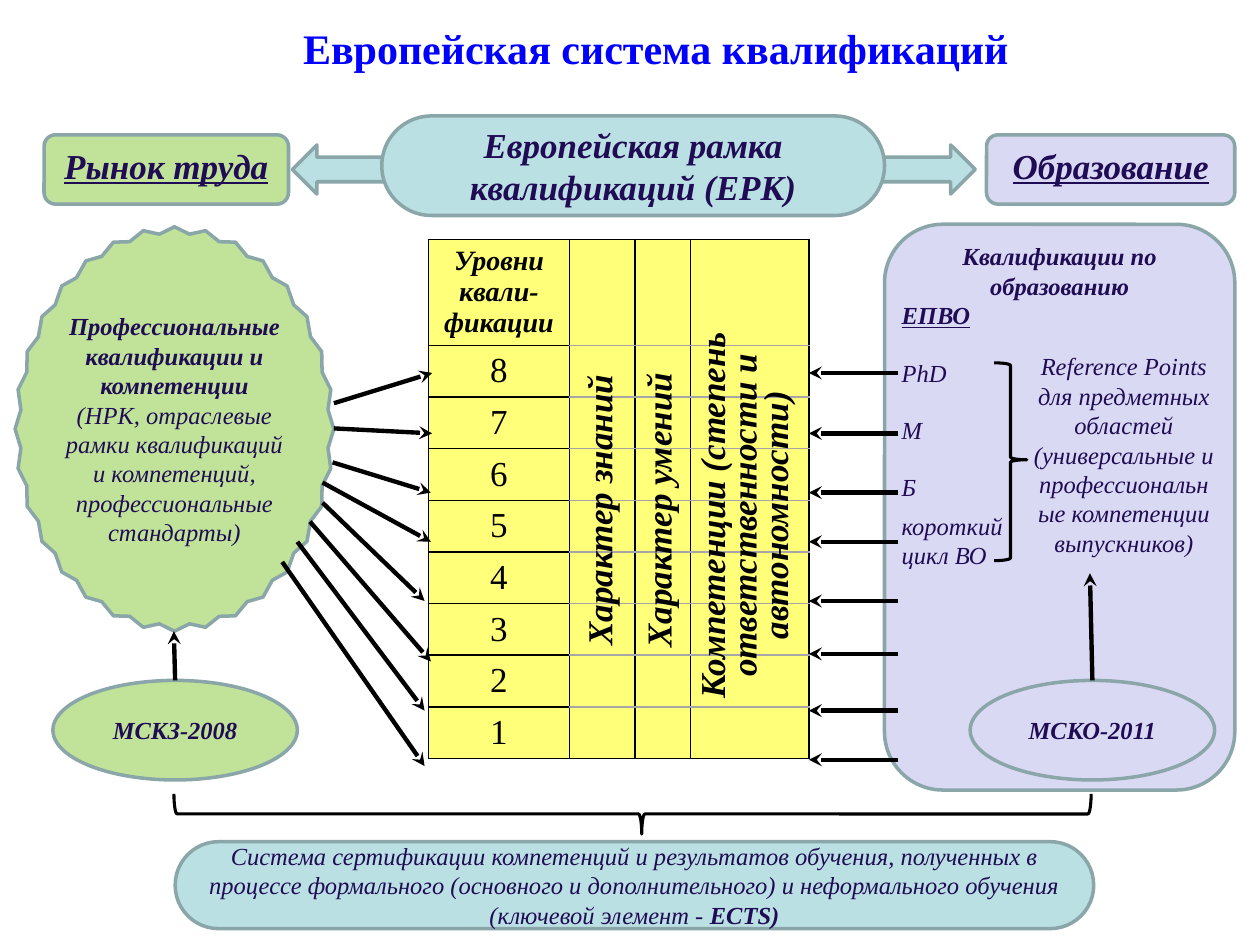
from dataclasses import dataclass, field

from lxml import etree
from pptx import Presentation
from pptx import util as u
from pptx.dml.color import RGBColor
from pptx.enum import shapes, text
from pptx.oxml import ns

PX = 9144  # 100 px to the inch
FONT = "Times New Roman"
BLACK, GREY, INK, TITLE = "000000", "A6A6A6", "200B55", "0000FF"
OUTLINE, TEAL, GREEN, LILAC, YELLOW = "8AA6A8", "BBE0E3", "C0E399", "D9D9F3", "FFFF79"
KIND, ALIGN, ANCHOR = shapes.MSO_SHAPE, text.PP_ALIGN, text.MSO_ANCHOR


@dataclass
class Span:
    words: str
    bold: bool = False
    underline: bool = False


@dataclass
class Line:
    spans: list[Span]
    align: ALIGN = ALIGN.CENTER
    before: float = 0
    spacing: float = 1.0


@dataclass
class Node:
    kind: KIND
    area: tuple[int, int, int, int]
    fill: str
    lines: list[Line] = field(default_factory=list)
    size: int = 14
    anchor: ANCHOR = ANCHOR.MIDDLE
    insets: tuple[int, int] = (10, 5)
    corner: float | None = None


def px(*values: int) -> list[u.Emu]:
    return [u.Emu(value * PX) for value in values]


def colour(code: str) -> RGBColor:
    return RGBColor.from_string(code)


def one(words: str, bold: bool = True, underline: bool = False, **layout) -> Line:
    return Line([Span(words, bold, underline)], **layout)


def write(frame, lines: list[Line], *, size: int, ink: str = INK, italic: bool = True,
          anchor: ANCHOR = ANCHOR.MIDDLE, insets: tuple[int, int] = (10, 5)) -> None:
    frame.word_wrap = True
    frame.vertical_anchor = anchor
    frame.margin_left = frame.margin_right = px(insets[0])[0]
    frame.margin_top = frame.margin_bottom = px(insets[1])[0]
    for index, line in enumerate(lines):
        para = frame.add_paragraph() if index else frame.paragraphs[0]
        para.alignment, para.line_spacing = line.align, line.spacing
        para.space_before = u.Pt(line.before)
        for span in line.spans:
            for number, part in enumerate(span.words.split("\n")):
                if number:
                    para.add_line_break()
                if not part:
                    continue
                run = para.add_run()
                run.text = part
                font = run.font
                font.name, font.size, font.color.rgb = FONT, u.Pt(size), colour(ink)
                font.bold, font.italic, font.underline = span.bold, italic, span.underline


def draw_node(page, node: Node) -> None:
    shape = page.shapes.add_shape(node.kind, *px(*node.area))
    shape.shadow.inherit = False
    shape.fill.solid()
    shape.fill.fore_color.rgb = colour(node.fill)
    shape.line.color.rgb, shape.line.width = colour(OUTLINE), u.Pt(2)
    if node.corner is not None:
        shape.adjustments[0] = node.corner
    if node.lines:
        write(shape.text_frame, node.lines, size=node.size, anchor=node.anchor, insets=node.insets)


def draw_arrow(page, start: tuple[int, int], end: tuple[int, int]) -> None:
    arrow = page.shapes.add_connector(shapes.MSO_CONNECTOR.STRAIGHT, *px(*start, *end))
    arrow.line.color.rgb, arrow.line.width = colour(BLACK), u.Pt(2.5)
    etree.SubElement(arrow.line._get_or_add_ln(), ns.qn("a:tailEnd"), type="stealth")
    etree.SubElement(arrow.element.spPr, ns.qn("a:effectLst"))


def draw_brace(page, area: tuple[int, int, int, int], rotation: int = 0) -> None:
    brace = page.shapes.add_shape(KIND.RIGHT_BRACE, *px(*area))
    brace.shadow.inherit = False
    brace.fill.background()
    brace.line.color.rgb, brace.line.width = colour(BLACK), u.Pt(1.75)
    brace.adjustments[0], brace.adjustments[1] = 0.08, 0.49
    brace.rotation = rotation


def draw_label(page, area: tuple[int, int, int, int], line: Line) -> None:
    box = page.shapes.add_textbox(*px(*area))
    write(box.text_frame, [line], size=20, ink=BLACK, insets=(0, 0))
    box.element.txBody.bodyPr.set("vert", "vert270")


def style_cell(cell, top: str, bottom: str) -> None:
    properties = cell._tc.get_or_add_tcPr()
    for side, code in (("L", BLACK), ("R", BLACK), ("T", top), ("B", bottom)):
        edge = etree.SubElement(properties, ns.qn(f"a:ln{side}"), w=str(u.Pt(1)))
        paint = etree.SubElement(edge, ns.qn("a:solidFill"))
        etree.SubElement(paint, ns.qn("a:srgbClr"), val=code)
    cell.fill.solid()
    cell.fill.fore_color.rgb = colour(YELLOW)


def draw_levels(page) -> None:
    widths, heights = (112, 52, 44, 94), (84,) + (41,) * 8
    table = page.shapes.add_table(len(heights), len(widths),
                                  *px(340, 190, sum(widths), sum(heights))).table
    table.first_row = table.horz_banding = False
    for column, width in zip(table.columns, px(*widths)):
        column.width = width
    for row, height in zip(table.rows, px(*heights)):
        row.height = height
    last = len(heights) - 1
    for r in range(len(heights)):
        for c in range(len(widths)):
            style_cell(table.cell(r, c), BLACK if c == 0 or r == 0 else GREY,
                       BLACK if c == 0 or r == last else GREY)
        words = str(len(heights) - r) if r else "Уровни квали-фикации"
        write(table.cell(r, 0).text_frame, [one(words, bold=r == 0)],
              size=20 if r else 16, ink=BLACK, italic=r == 0)


ROUND = KIND.ROUNDED_RECTANGLE
LEFT = ALIGN.LEFT
FRAMEWORK = [
    Node(KIND.LEFT_RIGHT_ARROW, (232, 115, 542, 39), TEAL),
    Node(ROUND, (303, 92, 399, 79), TEAL, [one("Европейская рамка квалификаций (ЕРК)")],
         size=20, insets=(10, 0), corner=0.5),
    Node(ROUND, (783, 107, 197, 55), LILAC, [one("Образование", underline=True)],
         size=20, anchor=ANCHOR.TOP),
    Node(ROUND, (35, 107, 194, 55), GREEN, [one("Рынок труда", underline=True)],
         size=20, anchor=ANCHOR.TOP),
    Node(ROUND, (702, 178, 278, 449), LILAC, [
        one("Квалификации по образованию"),
        one("ЕПВО", underline=True, align=LEFT),
        *[one(degree, bold=False, align=LEFT, before=16) for degree in ("PhD", "M", "Б")],
        one("короткий\nцикл ВО", bold=False, align=LEFT, before=5),
    ], anchor=ANCHOR.TOP, insets=(0, 0)),
]
LABOUR = [
    Node(KIND.OVAL, (42, 540, 194, 79), GREEN, [one("МСКЗ-2008")]),
    Node(KIND.STAR_32_POINT, (12, 180, 253, 321), GREEN, [Line([
        Span("Профессиональные квалификации и компетенции\n", bold=True),
        Span("(НРК, отраслевые рамки квалификаций и компетенций, профессиональные стандарты)"),
    ])], insets=(0, 0), corner=0.484),
]
CLOSING = [
    Node(KIND.OVAL, (770, 540, 194, 79), LILAC, [one("МСКО-2011")]),
    Node(ROUND, (139, 668, 729, 69), TEAL, [Line([
        Span("Система сертификации компетенций и результатов обучения, полученных в процессе "
             "формального (основного и дополнительного) и неформального обучения\n"
             "(ключевой элемент - "),
        Span("ECTS)", bold=True),
    ])], insets=(10, 0), corner=0.5),
]
LABELS = [
    ((458, 202, 34, 406), one("Характер знаний")),
    ((505, 202, 34, 406), one("Характер умений")),
    ((555, 206, 76, 406),
     one("Компетенции (степень ответственности и автономности)", spacing=0.75)),
]
EDUCATION_ROWS = (296, 344, 391, 430, 477, 519, 564, 603)
LABOUR_ARROWS = [
    ((265, 320), (343, 296)), ((265, 340), (343, 344)), ((264, 367), (342, 391)),
    ((256, 383), (342, 430)), ((256, 399), (337, 477)), ((246, 414), (342, 525)),
    ((236, 430), (337, 564)), ((224, 446), (337, 608)),
]
STANDARD_ARROWS = [((139, 540), (138, 501)), ((867, 540), (865, 455))]


def main() -> None:
    deck = Presentation()
    deck.slide_width, deck.slide_height = px(1000, 750)
    page = deck.slides.add_slide(deck.slide_layouts[5])

    # Title
    title = page.shapes.title
    title.left, title.top, title.width, title.height = px(67, 0, 907, 76)
    write(title.text_frame, [one("Европейская система квалификаций")],
          size=24, ink=TITLE, italic=False)

    # Labour market, level table and framework
    for node in LABOUR:
        draw_node(page, node)
    draw_levels(page)
    for area, line in LABELS:
        draw_label(page, area, line)
    for node in FRAMEWORK:
        draw_node(page, node)

    # Links to the levels, then the closing nodes and their links
    for y in EDUCATION_ROWS:
        draw_arrow(page, (713, y), (642, y))
    for node in CLOSING:
        draw_node(page, node)
    for start, end in LABOUR_ARROWS + STANDARD_ARROWS:
        draw_arrow(page, start, end)

    # Reference points and braces
    draw_brace(page, (789, 288, 26, 157))
    draw_brace(page, (486, 282, 32, 728), rotation=90)
    box = page.shapes.add_textbox(*px(809, 274, 166, 176))
    write(box.text_frame, [
        one("Reference Points", bold=False),
        one("для предметных областей\n(универсальные и профессиональные "
            "компетенции выпускников)", bold=False),
    ], size=14, anchor=ANCHOR.TOP)

    deck.save("out.pptx")


if __name__ == "__main__":
    main()
